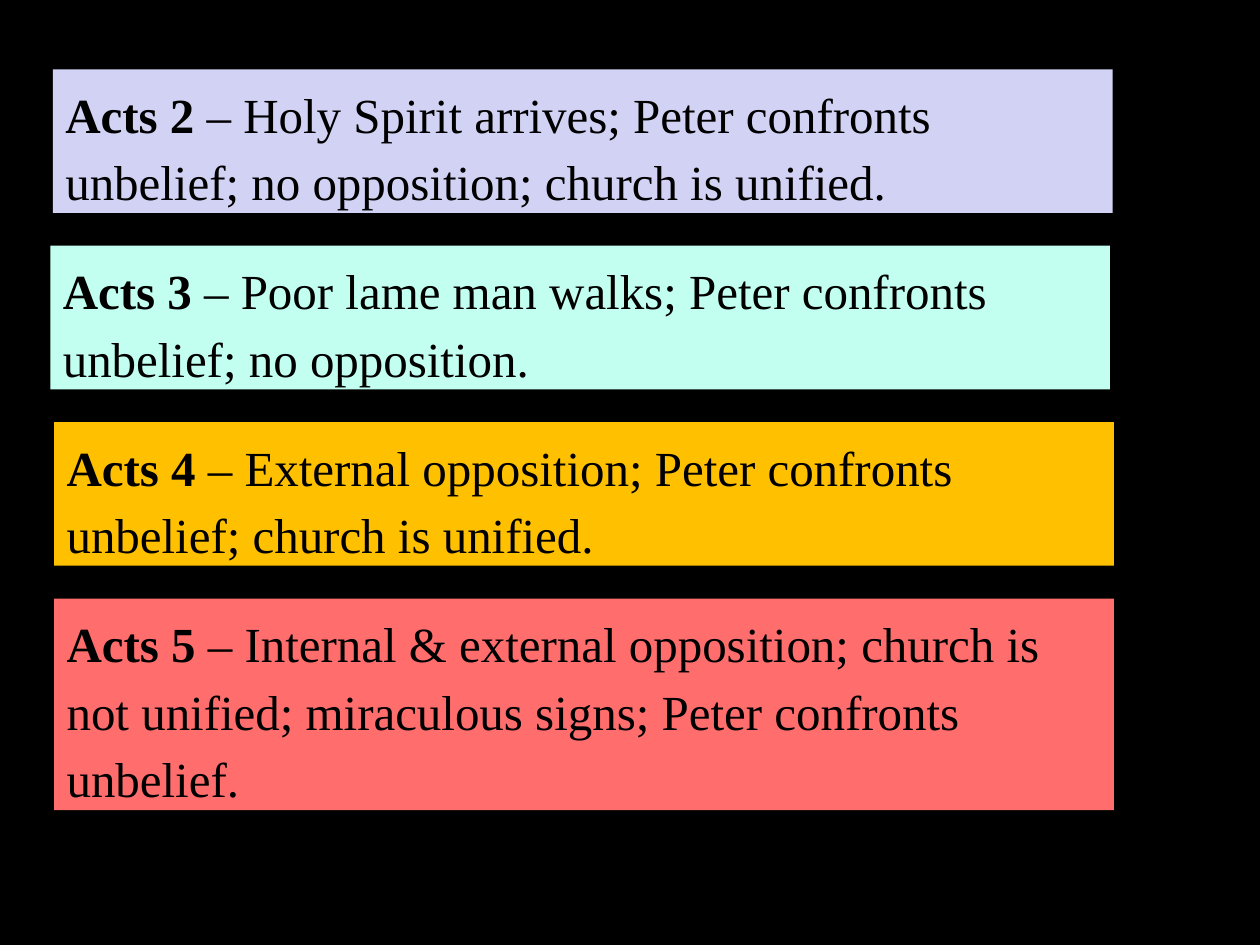
from pptx import Presentation
from pptx.dml.color import RGBColor
from pptx.enum.shapes import MSO_SHAPE
from pptx.enum.text import MSO_ANCHOR, MSO_AUTO_SIZE, PP_ALIGN
from pptx.util import Inches, Pt

RECTANGLE = MSO_SHAPE.RECTANGLE
TOP = MSO_ANCHOR.TOP
LEFT = PP_ALIGN.LEFT
GROW = MSO_AUTO_SIZE.SHAPE_TO_FIT_TEXT

THEME = {
    "background": RGBColor.from_string("000000"),
    "text": RGBColor.from_string("000000"),
    "font": "Times New Roman",
    "size": Pt(28),
}
FRAME_FORMAT = {"word_wrap": True, "auto_size": GROW, "vertical_anchor": TOP}
PARAGRAPH_FORMAT = {"alignment": LEFT, "line_spacing": 1.15, "space_before": Pt(12)}
FONT_FORMAT = {"name": THEME["font"], "size": THEME["size"]}

# Grid in inches: one row per chapter, with a small side offset for each
FIRST_ROW, ROW_PITCH = 0.55, 1.4
BAND_WIDTH = 8.41
TWO_LINES, THREE_LINES = 1.14, 1.68

CHAPTERS = [
    ("Acts 2", "Holy Spirit arrives; Peter confronts unbelief; no opposition; church is unified.",
     "D2D2F4", 0.42, TWO_LINES),
    ("Acts 3", "Poor lame man walks; Peter confronts unbelief; no opposition.",
     "C2FFF0", 0.40, TWO_LINES),
    ("Acts 4", "External opposition; Peter confronts unbelief; church is unified.",
     "FFC000", 0.43, TWO_LINES),
    ("Acts 5", "Internal & external opposition; church is not unified; miraculous signs; "
     "Peter confronts unbelief.",
     "FF6D6D", 0.43, THREE_LINES),
]


def apply_format(target, values):
    for attribute, value in values.items():
        setattr(target, attribute, value)


presentation = Presentation()
presentation.slide_width, presentation.slide_height = Inches(10), Inches(7.5)
slide = presentation.slides.add_slide(presentation.slide_layouts[6])
slide.background.fill.solid()
slide.background.fill.fore_color.rgb = THEME["background"]

for row, (chapter, events, color, left, height) in enumerate(CHAPTERS):
    top = FIRST_ROW + row * ROW_PITCH
    band = slide.shapes.add_shape(
        RECTANGLE, Inches(left), Inches(top), Inches(BAND_WIDTH), Inches(height))
    band.shadow.inherit = False
    band.fill.solid()
    band.fill.fore_color.rgb = RGBColor.from_string(color)
    band.line.fill.background()

    apply_format(band.text_frame, FRAME_FORMAT)
    summary = band.text_frame.paragraphs[0]
    apply_format(summary, PARAGRAPH_FORMAT)
    for words, bold in ((chapter, True), (f" – {events}", False)):
        run = summary.add_run()
        run.text = words
        apply_format(run.font, FONT_FORMAT | {"bold": bold})
        run.font.color.rgb = THEME["text"]

presentation.save("out.pptx")
